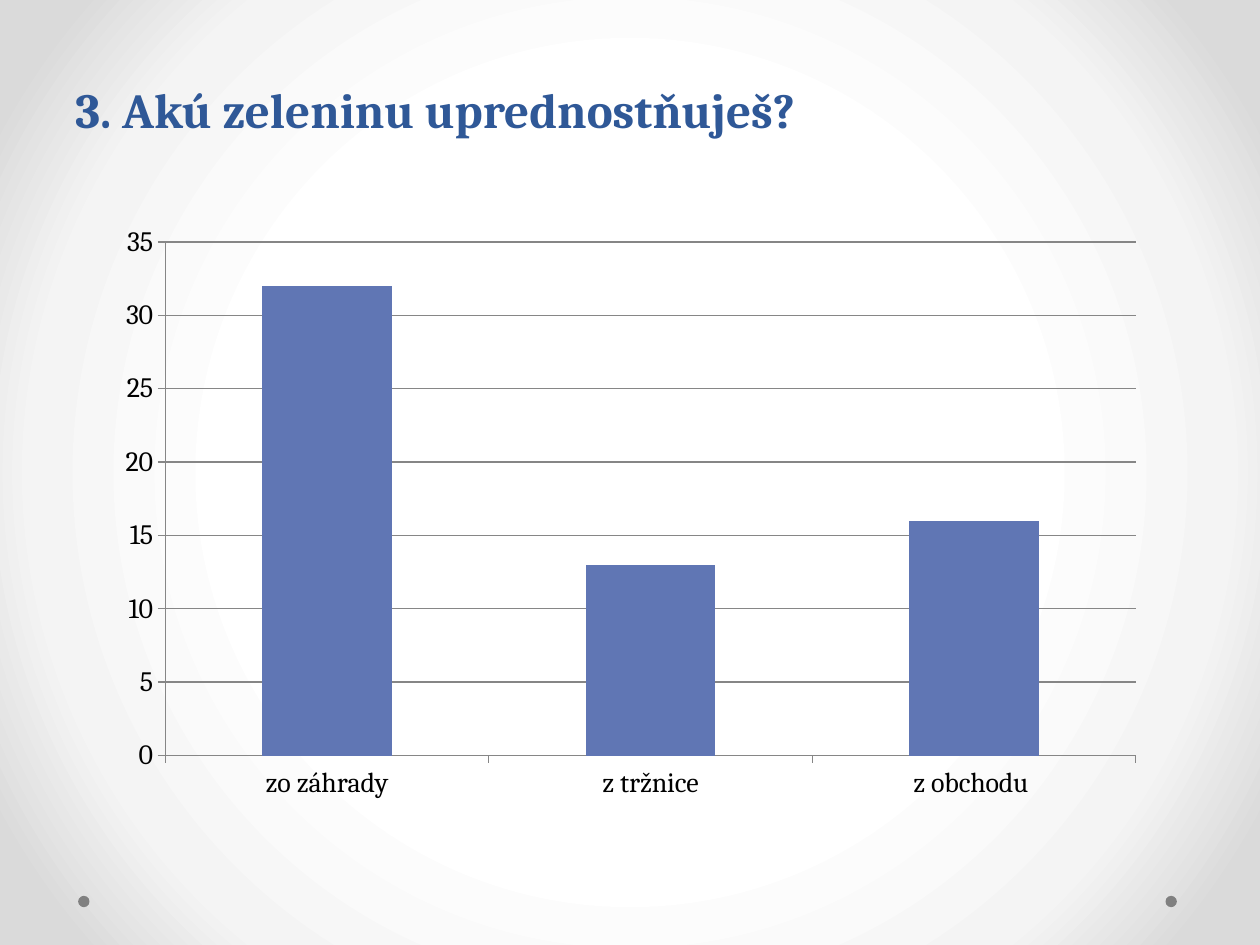
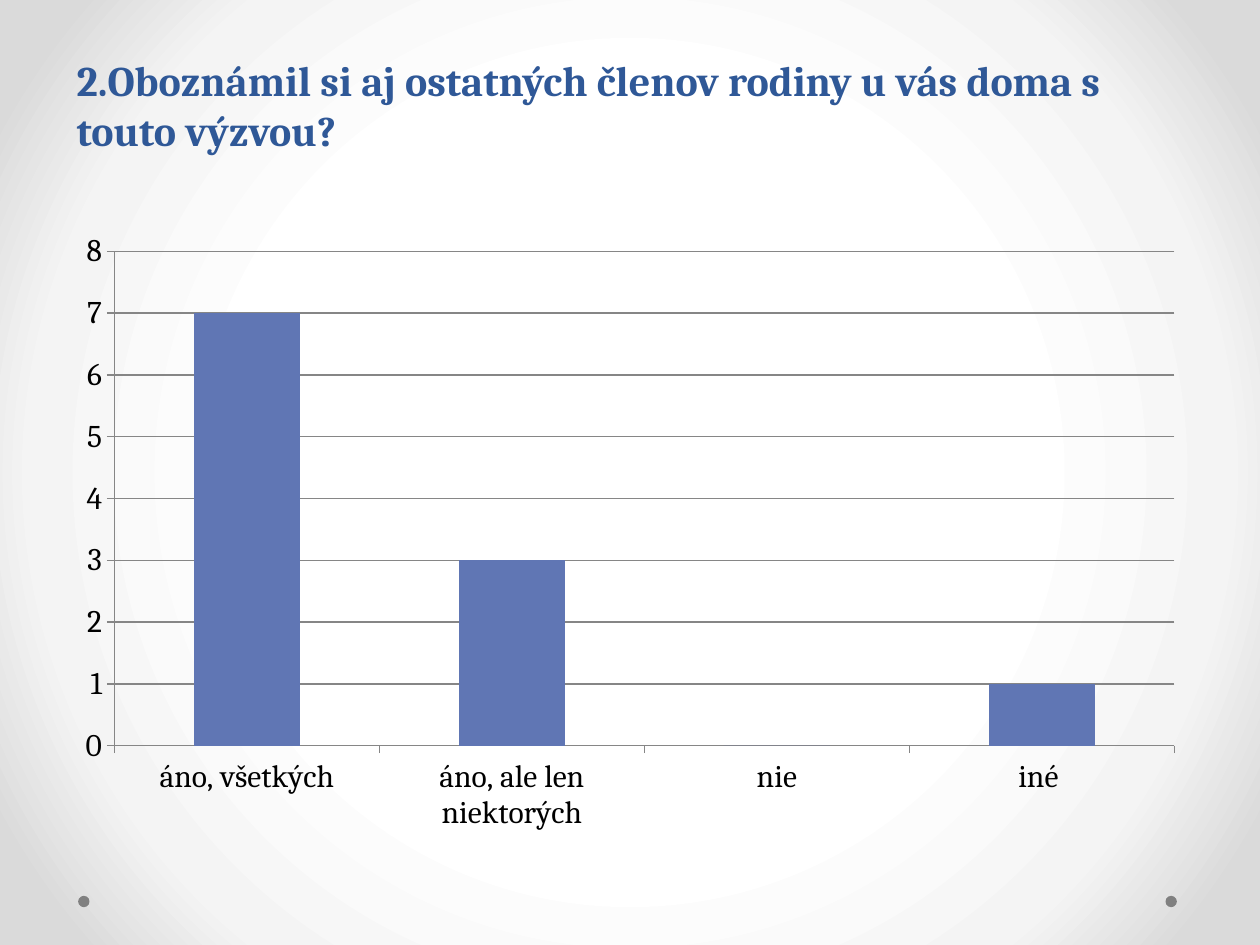
from lxml import etree
from pptx import Presentation
from pptx.chart.data import CategoryChartData
from pptx.dml.color import RGBColor
from pptx.enum.chart import XL_CHART_TYPE, XL_TICK_MARK
from pptx.enum.shapes import MSO_SHAPE
from pptx.enum.text import MSO_ANCHOR, PP_ALIGN
from pptx.oxml.ns import qn
from pptx.util import Inches, Pt

COLUMNS = XL_CHART_TYPE.COLUMN_CLUSTERED
TICK_OUT = XL_TICK_MARK.OUTSIDE
OVAL = MSO_SHAPE.OVAL
BOTTOM = MSO_ANCHOR.BOTTOM
LEFT = PP_ALIGN.LEFT

FONT = "Cambria"
TITLE_BLUE = RGBColor(0x2F, 0x58, 0x97)
BAR_BLUE = RGBColor(0x60, 0x76, 0xB4)
DOT_GRAY = RGBColor(0x80, 0x80, 0x80)
AXIS_GRAY = RGBColor(0x86, 0x86, 0x86)
BLACK = RGBColor(0x00, 0x00, 0x00)
GLOW_STOPS = [
    (50, RGBColor(0xFF, 0xFF, 0xFF)),
    (76, RGBColor(0xF4, 0xF4, 0xF4)),
    (92, RGBColor(0xDA, 0xDA, 0xDA)),
]

DOT_SIZE = 0.09
DOT_TOP = 7.11
DOT_LEFTS = (9.25, 0.62)


def inches(box):
    return [Inches(length) for length in box]


def paint_background(page):
    """Fill the page with a radial gradient that darkens towards the corners."""
    page.background.fill.gradient()
    gradient = page.element.find(".//" + qn("a:gradFill"))
    for child in list(gradient):
        gradient.remove(child)
    stops = etree.SubElement(gradient, qn("a:gsLst"))
    for percent, color in GLOW_STOPS:
        stop = etree.SubElement(stops, qn("a:gs"), pos=str(percent * 1000))
        etree.SubElement(stop, qn("a:srgbClr"), val=str(color))
    circle = etree.SubElement(gradient, qn("a:path"), path="circle")
    center = {side: "50000" for side in "ltrb"}
    etree.SubElement(circle, qn("a:fillToRect"), center)


def add_dots(page):
    for left in DOT_LEFTS:
        dot = page.shapes.add_shape(
            OVAL, *inches((left, DOT_TOP, DOT_SIZE, DOT_SIZE)))
        dot.shadow.inherit = False
        dot.fill.solid()
        dot.fill.fore_color.rgb = DOT_GRAY
        dot.line.fill.background()


def format_font(font, size, color, bold=False):
    font.name = FONT
    font.size = Pt(size)
    font.color.rgb = color
    font.bold = bold


def add_text(page, box, text, size, color=TITLE_BLUE, bold=True, spacing=None):
    frame = page.shapes.add_textbox(*inches(box)).text_frame
    frame.word_wrap = True
    frame.vertical_anchor = BOTTOM
    para = frame.paragraphs[0]
    para.alignment = LEFT
    if spacing:
        para.line_spacing = Pt(spacing)
    span = para.add_run()
    span.text = text
    format_font(span.font, size, color, bold)


def add_column_chart(page, box, answers, size, top=None, step=None):
    data = CategoryChartData()
    data.categories = list(answers)
    data.add_series("Series 1", answers.values())
    chart = page.shapes.add_chart(COLUMNS, *inches(box), data).chart
    chart.has_title = False
    chart.has_legend = False
    format_font(chart.font, size, BLACK)

    plot = chart.plots[0]
    plot.gap_width = 150
    plot.vary_by_categories = False
    bars = plot.series[0]
    bars.format.fill.solid()
    bars.format.fill.fore_color.rgb = BAR_BLUE

    values = chart.value_axis
    values.has_major_gridlines = True
    if top:
        values.minimum_scale = 0
        values.maximum_scale = top
        values.major_unit = step
    for axis in (chart.category_axis, values):
        axis.major_tick_mark = TICK_OUT
        format_font(axis.tick_labels.font, size, BLACK)
    for part in (chart.category_axis, values, values.major_gridlines):
        part.format.line.color.rgb = AXIS_GRAY
        part.format.line.width = Pt(0.75)


def add_question_page(deck, title, chart):
    """Add a page with a question as its title and a chart of the answers."""
    page = deck.slides.add_slide(deck.slide_layouts[6])
    paint_background(page)
    add_dots(page)
    add_text(page, **title)
    add_column_chart(page, **chart)


def main():
    deck = Presentation()
    deck.slide_width = Inches(10)
    deck.slide_height = Inches(7.5)
    add_question_page(
        deck,
        title=dict(box=(0.5, 0, 9, 1.15), size=28, spacing=58,
                   text="3. Akú zeleninu uprednostňuješ?"),
        chart=dict(box=(0.83, 1.7, 8.35, 4.74), size=16, top=35, step=5,
                   answers={"zo záhrady": 32, "z tržnice": 13, "z obchodu ": 16}),
    )
    add_question_page(
        deck,
        title=dict(box=(0.51, 0.29, 9, 0.99), size=24,
                   text="2.Oboznámil si aj ostatných členov rodiny "
                        "u vás doma s touto výzvou?"),
        chart=dict(box=(0.5, 1.75, 9, 4.95), size=18,
                   answers={"áno, všetkých": 7, "áno, ale len niektorých": 3,
                            "nie": 0, "iné ": 1}),
    )
    deck.save("out.pptx")


if __name__ == "__main__":
    main()
